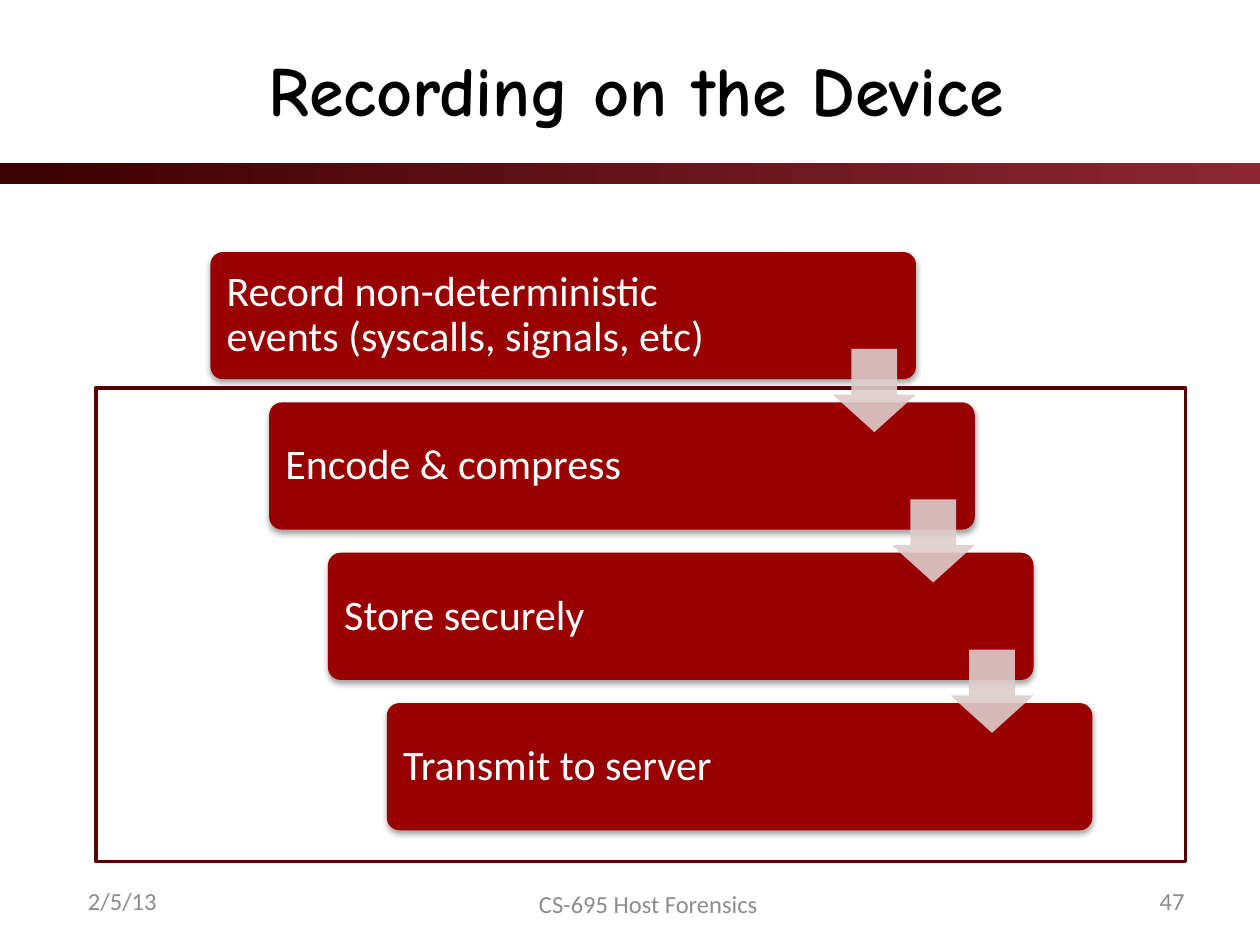
from dataclasses import dataclass

from lxml import etree
from pptx import Presentation
from pptx.dml.color import RGBColor
from pptx.enum import shapes, text
from pptx.oxml import ns
from pptx.util import Inches, Pt

SHAPE = shapes.MSO_SHAPE
ALIGN = text.PP_ALIGN
CARD_WIDTH, CARD_HEIGHT = 5.6, 1.01
ARROW_SIZE = 0.66
STEP_X, STEP_Y = 1.4 / 3, 3.58 / 3


@dataclass
class Box:
    left: float
    top: float
    width: float
    height: float

    def lengths(self):
        return [Inches(v) for v in (self.left, self.top, self.width, self.height)]


@dataclass
class FooterItem:
    label: str
    box: Box
    align: ALIGN


def rgb(value: str) -> RGBColor:
    return RGBColor.from_string(value)


def add_effect(parent, tag: str, **attributes):
    return etree.SubElement(parent, ns.qn(tag), {k: str(v) for k, v in attributes.items()})


def write(frame, content: str, *, size: float, color: str, font: str = "Calibri",
          bold: bool = False, align=ALIGN.LEFT, inset: float | None = None,
          spacing: float | None = None) -> None:
    """Put one formatted paragraph in a text frame."""
    frame.word_wrap = True
    frame.auto_size = text.MSO_AUTO_SIZE.NONE
    frame.vertical_anchor = text.MSO_ANCHOR.MIDDLE
    if inset is not None:
        frame.margin_left = frame.margin_right = Inches(inset)
        frame.margin_top = frame.margin_bottom = Inches(inset)
    paragraph = frame.paragraphs[0]
    paragraph.alignment = align
    if spacing is not None:
        paragraph.line_spacing = spacing
    run = paragraph.add_run()
    run.text = content
    run.font.name = font
    run.font.size = Pt(size)
    run.font.bold = bold
    run.font.color.rgb = rgb(color)


def add_block(parent, kind, box: Box, fill: str, adjustments=()):
    """Add a filled shape without outline or shadow."""
    block = parent.add_shape(kind, *box.lengths())
    block.shadow.inherit = False
    block.fill.solid()
    block.fill.fore_color.rgb = rgb(fill)
    block.line.fill.background()
    for index, value in enumerate(adjustments):
        block.adjustments[index] = value
    return block


def add_step(parent, label: str, left: float, top: float) -> None:
    card = add_block(parent, SHAPE.ROUNDED_RECTANGLE,
                     Box(left, top, CARD_WIDTH, CARD_HEIGHT), "990000", [0.1])
    effects = card._element.spPr.find(ns.qn("a:effectLst"))
    shadow = add_effect(effects, "a:outerShdw", blurRad=Pt(3.1), dist=Pt(1.8),
                        dir=90 * 60000, rotWithShape=0)
    shade = add_effect(shadow, "a:srgbClr", val="000000")
    add_effect(shade, "a:alpha", val=35000)
    caption = parent.add_textbox(*Box(left + 0.03, top + 0.03, 4.42, 0.95).lengths())
    write(caption.text_frame, label, size=24, color="FFFFFF", inset=0.1, spacing=0.9)


def add_step_arrow(parent, left: float, top: float) -> None:
    """Add the arrow that leads from the card at this position to the next."""
    box = Box(left + CARD_WIDTH - ARROW_SIZE, top + 0.77, ARROW_SIZE, ARROW_SIZE)
    arrow = add_block(parent, SHAPE.DOWN_ARROW, box, "DECCCC")
    arrow.adjustments[0] = 0.55
    arrow.adjustments[1] = 0.45
    color = arrow._element.spPr.find(ns.qn("a:solidFill"))[0]
    add_effect(color, "a:alpha", val=90000)


STEPS = [
    "Record non-deterministic events (syscalls, signals, etc)",
    "Encode & compress",
    "Store securely",
    "Transmit to server",
]
FOOTER = [
    FooterItem("2/5/13", Box(0.6, 6.95, 1.83, 0.4), ALIGN.LEFT),
    FooterItem("CS-695 Host Forensics", Box(3.9, 6.97, 2.49, 0.4), ALIGN.CENTER),
    FooterItem("47", Box(7.67, 6.95, 1.83, 0.4), ALIGN.RIGHT),
]


def main() -> None:
    deck = Presentation()
    deck.slide_width, deck.slide_height = Inches(10), Inches(7.5)
    slide = deck.slides.add_slide(deck.slide_layouts[5])

    # Title
    title = slide.shapes.title
    title.left, title.top, title.width, title.height = Box(0.6, 0.15, 8.9, 1.1).lengths()
    write(title.text_frame, "Recording on the Device", size=40, color="000000",
          font="Comic Neue", bold=True, align=ALIGN.CENTER)

    # Gradient band under the title
    band = add_block(slide.shapes, SHAPE.RECTANGLE, Box(0, 1.29, 10, 0.17), "3C0000")
    band.fill.gradient()
    band.fill.gradient_angle = 0
    for stop, color in zip(band.fill.gradient_stops, ("3C0000", "8C2633")):
        stop.color.rgb = rgb(color)

    # Frame around the later steps
    frame = add_block(slide.shapes, SHAPE.RECTANGLE, Box(0.76, 3.08, 8.65, 3.76), "FFFFFF")
    frame.line.color.rgb = rgb("580101")
    frame.line.width = Pt(2)

    # Staircase of steps, with the arrows in front
    staircase = slide.shapes.add_group_shape().shapes
    places = [(1.67 + i * STEP_X, 2 + i * STEP_Y) for i in range(len(STEPS))]
    for label, place in zip(STEPS, places):
        add_step(staircase, label, *place)
    for place in places[:-1]:
        add_step_arrow(staircase, *place)

    # Footer
    for item in FOOTER:
        footer = slide.shapes.add_textbox(*item.box.lengths())
        write(footer.text_frame, item.label, size=14, color="8C8C8C", align=item.align)

    deck.save("out.pptx")


if __name__ == "__main__":
    main()
